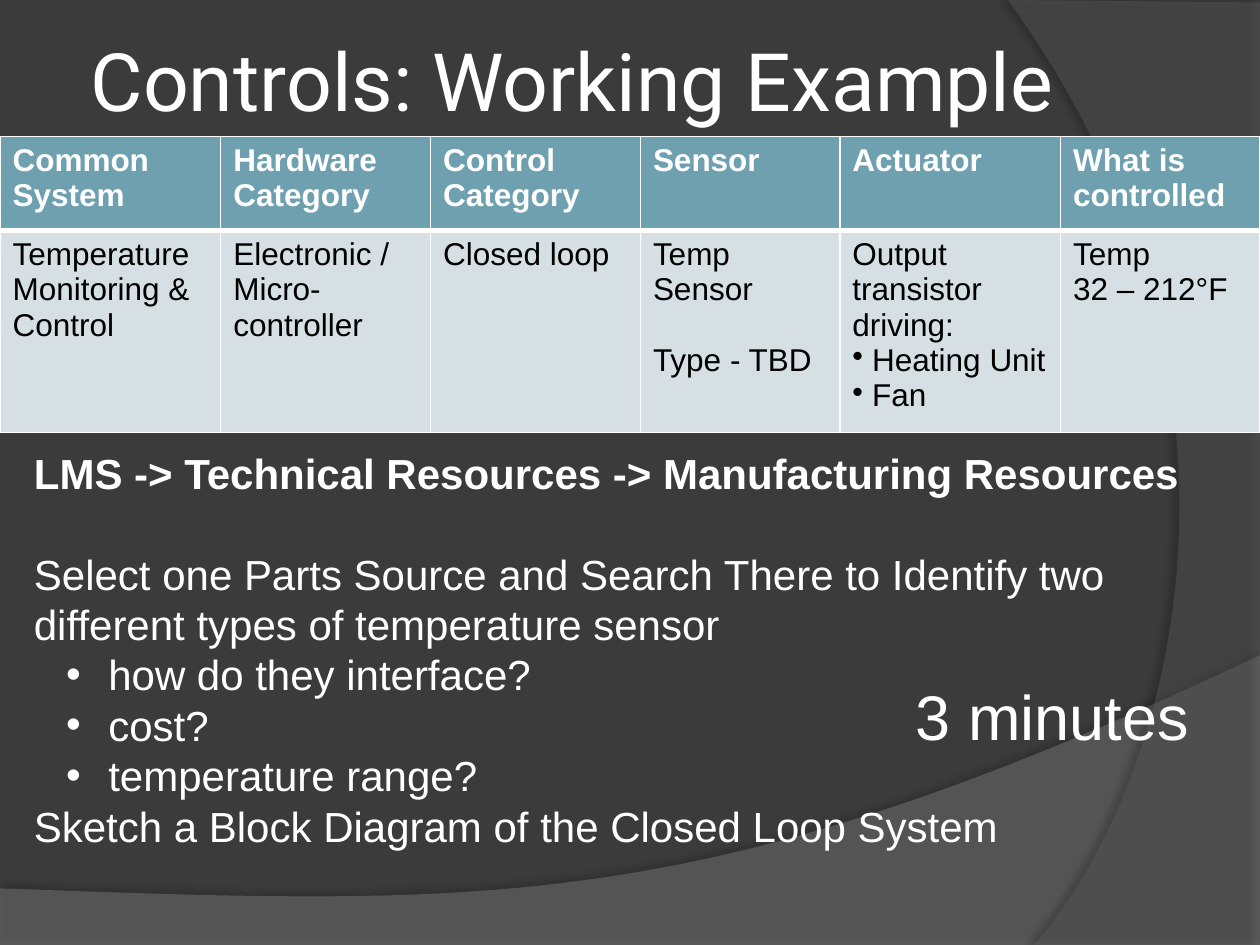
import pptx
import pptx.dml.color
import pptx.enum.text
import pptx.oxml
import pptx.oxml.ns
import pptx.util
from pptx.util import Cm, Pt

COLORS = {
    "background": "3B3B3B", "sweep": "7F7F7F", "arc": "5E5E5E", "shadow": "000000",
    "light": "FFFFFF", "dark": "000000", "header": "6EA0B0", "row": "D5DFE4",
}
NS = pptx.oxml.ns.nsdecls("a")
HEADER = ["Common System", "Hardware Category", "Control Category",
          "Sensor", "Actuator", "What is controlled"]
# Each paragraph is its text plus optional settings for style_paragraph.
SYSTEM = [
    [("Temperature", {}), ("Monitoring & Control", {})],
    [("Electronic / Micro-controller", {})],
    [("Closed loop", {})],
    [("Temp Sensor", {}), ("Type - TBD", {"before": 20})],
    [("Output transistor driving:", {}),
     ("Heating Unit", {"bullet": (0.4, 0.4)}), ("Fan", {"bullet": (0.4, 0.4)})],
    [("Temp", {}), ("32 – 212°F", {})],
]
TASK_BULLET = {"bullet": (1.5, 0.85)}
TASK = [
    ("LMS -> Technical Resources -> Manufacturing Resources", {"bold": True}),
    ("Select one Parts Source and Search There to Identify two different types "
     "of temperature sensor", {"before": 28.8}),
    ("how do they interface?", TASK_BULLET),
    ("cost?", TASK_BULLET),
    ("temperature range?", TASK_BULLET),
    ("Sketch a Block Diagram of the Closed Loop System", {}),
]


def rgb(name):
    return pptx.dml.color.RGBColor.from_string(COLORS[name])


def set_attrs(obj, **values):
    for name, value in values.items():
        setattr(obj, name, value)


def place(sp, box):
    set_attrs(sp, **dict(zip(("left", "top", "width", "height"), map(Cm, box))))


def style_paragraph(p, size, color, bold=False, before=0, bullet=None, font="Arial"):
    """Format a paragraph; bullet is (text indent, hanging) in cm."""
    margin, hanging = bullet or (0, 0)
    pPr = p._p.get_or_add_pPr()
    pPr.set("marL", str(Cm(margin)))
    pPr.set("indent", str(-Cm(hanging)))
    mark = '<a:buChar %s char="•"/>' if bullet else "<a:buNone %s/>"
    pPr.append(pptx.oxml.parse_xml(mark % NS))
    set_attrs(p, space_before=Pt(before), alignment=pptx.enum.text.PP_ALIGN.LEFT)
    for r in p.runs:
        set_attrs(r.font, size=Pt(size), name=font, bold=bold)
        r.font.color.rgb = rgb(color)


def write(tf, paragraphs, size, color, **common):
    for i, (text, settings) in enumerate(paragraphs):
        p = tf.add_paragraph() if i else tf.paragraphs[0]
        p.text = text
        style_paragraph(p, size, color, **{**common, **settings})


def bezier(p0, p1, p2, p3, steps=48):
    """Points along a cubic curve, without its start."""
    for t in (i / steps for i in range(1, steps + 1)):
        u = 1 - t
        yield tuple(u**3 * a + 3 * u * u * t * b + 3 * u * t * t * c + t**3 * d
                    for a, b, c, d in zip(p0, p1, p2, p3))


def add_backdrop_shape(s, corners, curve, color, alpha, shadow):
    """Draw corners closed by a curve; shadow is (alpha, blur, distance, angle)."""
    points = [(Cm(x), Cm(y)) for x, y in [*corners, *bezier(corners[-1], *curve)]]
    builder = s.shapes.build_freeform(*points[0])
    builder.add_line_segments(points[1:])
    sp = builder.convert_to_shape()
    sp.fill.solid()
    sp.fill.fore_color.rgb = rgb(color)
    sp.line.fill.background()
    fill = sp._element.spPr.find(".//" + pptx.oxml.ns.qn("a:srgbClr"))
    fill.append(pptx.oxml.parse_xml(f'<a:alpha {NS} val="{alpha * 1000}"/>'))
    opacity, blur, distance, angle = shadow
    sp._element.spPr.append(pptx.oxml.parse_xml(
        f'<a:effectLst {NS}><a:outerShdw blurRad="{Pt(blur)}" dist="{Pt(distance)}" '
        f'dir="{angle * 60000}" algn="ctr" rotWithShape="0">'
        f'<a:srgbClr val="{COLORS["shadow"]}"><a:alpha val="{opacity * 1000}"/>'
        '</a:srgbClr></a:outerShdw></a:effectLst>'))


def add_backdrop(s):
    s.background.fill.solid()
    s.background.fill.fore_color.rgb = rgb("background")
    add_backdrop_shape(s, [(0, 17.91), (0, 19.05), (25.4, 19.05), (25.4, 13.21)],
                       [(14.2, 18.52), (9.93, 18.26), (0, 17.91)],
                       "sweep", 45, (35, 4, 3.5, 270))
    add_backdrop_shape(s, [(25.4, 0.05), (25.4, 19.05), (20.85, 19.05)],
                       [(23.75, 15.72), (25.86, 7.62), (20.32, 0)],
                       "arc", 40, (45, 4, 4, 180))


def fill_title(sp, box):
    place(sp, box)
    tf = sp.text_frame
    set_attrs(tf, word_wrap=True, auto_size=pptx.enum.text.MSO_AUTO_SIZE.NONE,
              vertical_anchor=pptx.enum.text.MSO_ANCHOR.MIDDLE,
              **{"margin_" + side: Cm(0.13) for side in ("left", "top", "right", "bottom")})
    write(tf, [("Controls: Working Example", {})], 46, "light", font="Roboto")


def fill_task(sp, box):
    place(sp, box)
    set_attrs(sp.text_frame, word_wrap=True,
              auto_size=pptx.enum.text.MSO_AUTO_SIZE.SHAPE_TO_FIT_TEXT,
              vertical_anchor=pptx.enum.text.MSO_ANCHOR.TOP)
    write(sp.text_frame, TASK, 24, "light")


def format_cell(cell, paragraphs, fill, color, bold, bottom):
    tcPr = cell._tc.get_or_add_tcPr()
    for i, (side, width) in enumerate({"L": 1, "R": 1, "T": 1, "B": bottom}.items()):
        tcPr.insert(i, pptx.oxml.parse_xml(
            f'<a:ln{side} {NS} w="{Pt(width)}"><a:solidFill>'
            f'<a:srgbClr val="{COLORS["light"]}"/></a:solidFill></a:ln{side}>'))
    cell.fill.solid()
    cell.fill.fore_color.rgb = rgb(fill)
    write(cell.text_frame, paragraphs, 18, color, bold=bold)


def add_system_table(s, box):
    table = s.shapes.add_table(2, len(HEADER), *map(Cm, box)).table
    for column, width in zip(table.columns, (4.45, 4.23, 4.23, 4.02, 4.45, 4.02)):
        column.width = Cm(width)
    table.rows[0].height = Cm(1.9)
    table.rows[1].height = Cm(box[3] - 1.9)
    for i, (heading, paragraphs) in enumerate(zip(HEADER, SYSTEM)):
        format_cell(table.cell(0, i), [(heading, {})], "header", "light", True, 3)
        format_cell(table.cell(1, i), paragraphs, "row", "dark", False, 1)
        # The shared edge takes the heavier rule from both sides.
        top = table.cell(1, i)._tc.tcPr.find(pptx.oxml.ns.qn("a:lnT"))
        top.set("w", str(Pt(3)))


def add_time_limit(s, box):
    tf = s.shapes.add_textbox(*map(Cm, box)).text_frame
    set_attrs(tf, word_wrap=False,
              auto_size=pptx.enum.text.MSO_AUTO_SIZE.SHAPE_TO_FIT_TEXT)
    write(tf, [("3 minutes", {})], 36, "light")


def main():
    prs = pptx.Presentation()
    set_attrs(prs, slide_width=Cm(25.4), slide_height=Cm(19.05))
    s = prs.slides.add_slide(prs.slide_layouts[1])
    title, body = s.placeholders
    add_backdrop(s)
    for sp in (title, body):  # bring the text in front of the backdrop
        s.shapes._spTree.append(sp._element)
    fill_title(title, (1.7, 0.43, 20.75, 2.34))
    add_system_table(s, (0, 2.75, 25.4, 5.72))
    fill_task(body, (0.43, 8.89, 24.56, 8.46))
    add_time_limit(s, (18.21, 13.54, 6.07, 1.8))
    prs.save("out.pptx")


if __name__ == "__main__":
    main()
